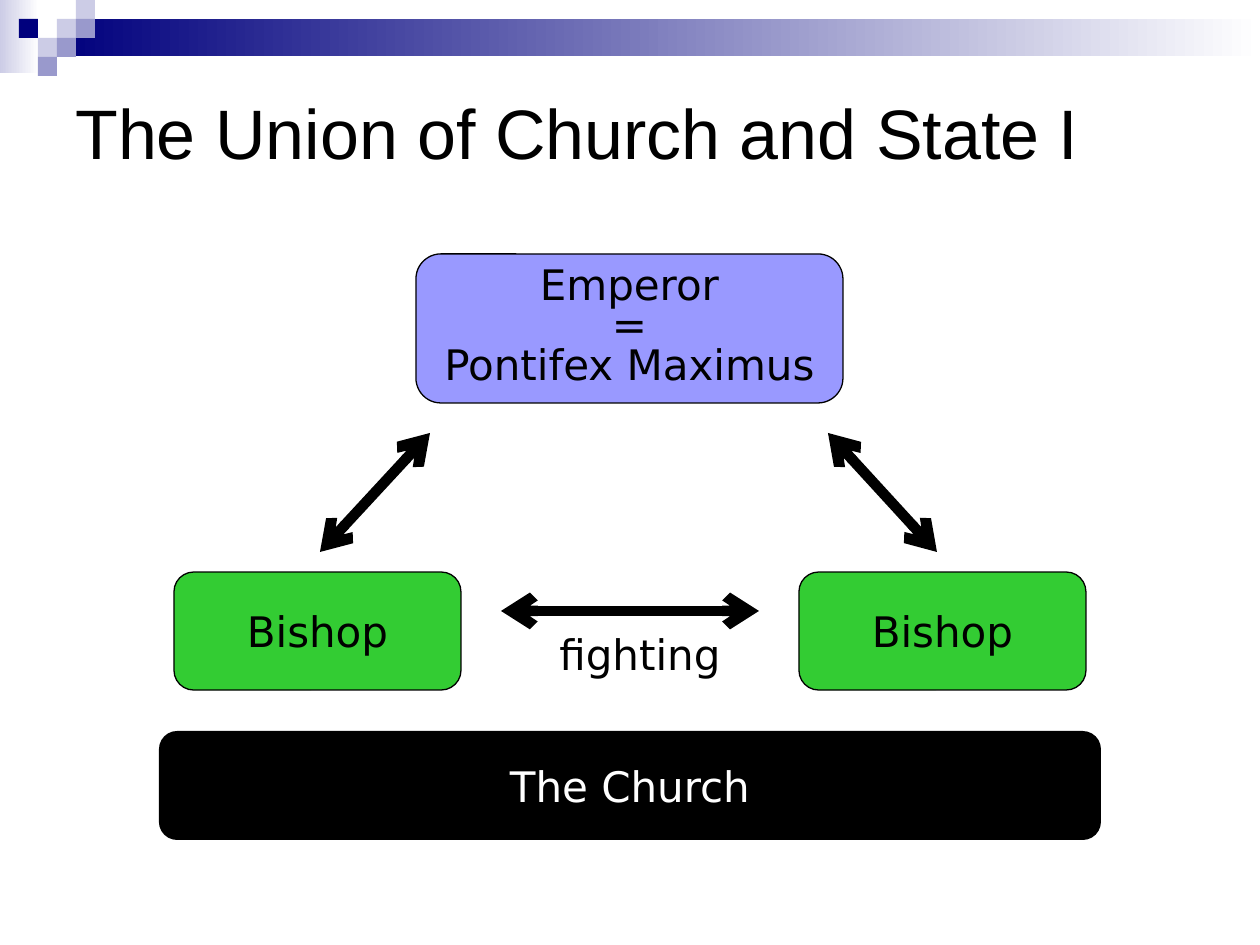
from lxml.etree import SubElement
from pptx import Presentation
from pptx.dml.color import RGBColor
from pptx.enum.shapes import MSO_CONNECTOR, MSO_SHAPE
from pptx.enum.text import MSO_ANCHOR, PP_ALIGN
from pptx.oxml.ns import qn
from pptx.util import Emu, Pt

BODY = {"size": Pt(24), "name": "DejaVu Sans"}
HEADING = {"size": Pt(40), "name": "Arial"}
CENTRED = {"alignment": PP_ALIGN.CENTER}
BLACK, WHITE, NAVY = "000000", "FFFFFF", "00007D"
LILAC, SLATE = "CCCCE6", "9999CC"


def px(length):
    """Turn pixels into EMU."""
    return Emu(round(length * 914400 / 126))


def color(value):
    """Turn a hex string into a colour."""
    return RGBColor.from_string(value)


def apply(target, values):
    """Set each attribute named in a dict."""
    for name, value in values.items():
        setattr(target, name, value)


def write(shape, lines, font, font_color, paragraph_format, frame_format):
    """Fill a shape with formatted paragraphs."""
    frame = shape.text_frame
    apply(frame, frame_format)
    frame.text = "\n".join(lines)
    for paragraph in frame.paragraphs:
        apply(paragraph, paragraph_format)
        apply(paragraph.font, font)
        paragraph.font.color.rgb = color(font_color)


def add_block(slide, kind, box, fills, line=None):
    """Add a shape with a solid fill, or a gradient for two colours."""
    shape = slide.shapes.add_shape(kind, *map(px, box))
    shape.shadow.inherit = False
    if len(fills) == 1:
        shape.fill.solid()
        shape.fill.fore_color.rgb = color(fills[0])
    else:
        shape.fill.gradient()
        shape.fill.gradient_angle = 0
        for stop, value in zip(shape.fill.gradient_stops, fills):
            stop.color.rgb = color(value)
    if line:
        shape.line.color.rgb = color(line)
        shape.line.width = Pt(0.75)
    else:
        shape.line.fill.background()
    return shape


def add_label(slide, box, lines, font, paragraph_format, frame_format):
    """Add a wrapped black text box."""
    label = slide.shapes.add_textbox(*map(px, box))
    write(label, lines, font, BLACK, paragraph_format, {"word_wrap": True, **frame_format})


def add_node(slide, box, lines, fill, line=BLACK, font_color=BLACK, spacing=1.0):
    """Add a rounded box with centred text."""
    node = add_block(slide, MSO_SHAPE.ROUNDED_RECTANGLE, box, [fill], line)
    node.adjustments[0] = 0.167
    write(node, lines, BODY, font_color, {**CENTRED, "line_spacing": spacing},
          {"word_wrap": False, "vertical_anchor": MSO_ANCHOR.MIDDLE})


def add_double_arrow(slide, start, end):
    """Add a thick black line with an arrowhead at each end."""
    arrow = slide.shapes.add_connector(MSO_CONNECTOR.STRAIGHT, *map(px, start + end))
    arrow.line.color.rgb = color(BLACK)
    arrow.line.width = Pt(6)
    for tag in ("a:headEnd", "a:tailEnd"):
        SubElement(arrow.line._get_or_add_ln(), qn(tag), type="arrow")
    SubElement(arrow._element.spPr, qn("a:effectLst"))


def build_banner(slide, left, top, width):
    """Draw the fading bar and its checkered corner."""
    cell = 19
    squares = [(3, 1, LILAC), (4, 0, LILAC), (4, 1, SLATE), (2, 2, LILAC),
               (1, 1, NAVY), (3, 2, SLATE), (2, 3, SLATE)]
    bar_left = left + 3 * cell
    add_block(slide, MSO_SHAPE.RECTANGLE, (left, top, 39, 73), [LILAC, WHITE])
    add_block(slide, MSO_SHAPE.RECTANGLE,
              (bar_left, top + cell, left + width - bar_left, 37), [NAVY, WHITE])
    for column, row, fill in squares:
        add_block(slide, MSO_SHAPE.RECTANGLE,
                  (left + column * cell, top + row * cell, cell, cell), [fill])


def build_diagram(slide, left, top, width, height):
    """Draw the emperor, the bishops, the church and their arrows."""
    emperor_width, bishop_width, bishop_inset, church_height = 427, 287, 15, 109
    add_node(slide, (left + (width - emperor_width) // 2, top, emperor_width, 149),
             ["Emperor", "=", "Pontifex Maximus"], "9999FF", spacing=0.8)
    for offset in (bishop_inset, width - bishop_inset - bishop_width):
        add_node(slide, (left + offset, top + 318, bishop_width, 118), ["Bishop"], "33CC33")
    add_node(slide, (left, top + height - church_height, width, church_height),
             ["The Church"], BLACK, line=None, font_color=WHITE)
    arrows = [((342, 357), (600, 357)), ((161, 298), (271, 179)), ((778, 298), (669, 179))]
    for ends in arrows:
        start, end = [(left + x, top + y) for x, y in ends]
        add_double_arrow(slide, start, end)
    add_label(slide, (left + 355, top + 368, 252, 63), ["fighting"], BODY, CENTRED, {})


def main():
    """Build and save the slide."""
    presentation = Presentation()
    apply(presentation, {"slide_width": px(1260), "slide_height": px(945)})
    slide = presentation.slides.add_slide(presentation.slide_layouts[6])
    build_banner(slide, 0, 0, 1260)
    add_label(slide, (63, 37, 1134, 189), ["The Union of Church and State I"], HEADING,
              {"alignment": PP_ALIGN.LEFT}, {"vertical_anchor": MSO_ANCHOR.MIDDLE})
    build_diagram(slide, 159, 254, 942, 586)
    presentation.save("out.pptx")


if __name__ == "__main__":
    main()
